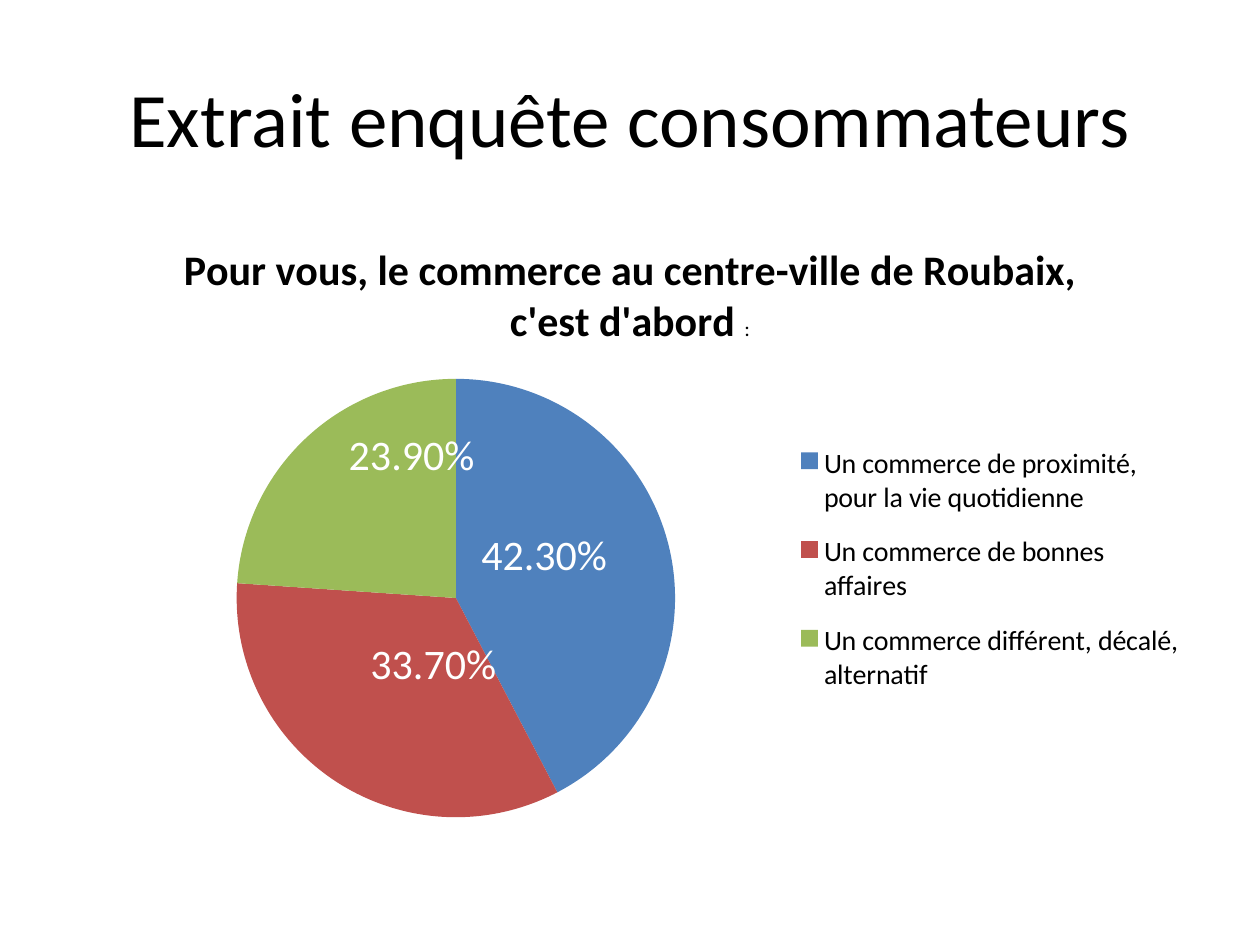
from lxml.etree import SubElement
from pptx import Presentation
from pptx.chart.data import CategoryChartData
from pptx.dml.color import RGBColor
from pptx.enum.chart import XL_CHART_TYPE, XL_LABEL_POSITION, XL_LEGEND_POSITION
from pptx.enum.text import MSO_ANCHOR, PP_ALIGN
from pptx.oxml.ns import qn
from pptx.util import Inches, Pt

BLACK = RGBColor(0x00, 0x00, 0x00)
WHITE = RGBColor(0xFF, 0xFF, 0xFF)
BLUE = RGBColor(0x4F, 0x81, 0xBD)
RED = RGBColor(0xC0, 0x50, 0x4D)
GREEN = RGBColor(0x9B, 0xBB, 0x59)

QUESTION = "Pour vous, le commerce au centre-ville de Roubaix, c'est d'abord "
ANSWERS = [
    ("Un commerce de proximité, pour la vie quotidienne", 0.423, BLUE, (-0.016, -0.024)),
    ("Un commerce de bonnes affaires", 0.337, RED, (0.033, -0.038)),
    ("Un commerce différent, décalé, alternatif", 0.239, GREEN, (0.027, -0.098)),
]


def format_font(font, size, color=BLACK, bold=False):
    """Apply the deck's typeface with a size, colour and weight."""
    font.name = "Calibri"
    font.size = Pt(size)
    font.color.rgb = color
    font.bold = bold


def add_text(paragraph, text, **font_format):
    """Append a formatted run to a centred paragraph."""
    paragraph.alignment = PP_ALIGN.CENTER
    run = paragraph.add_run()
    run.text = text
    format_font(run.font, **font_format)


def set_layout(parent, index, **settings):
    """Give a chart part a manual layout at its place in the schema order."""
    for previous in parent.findall(qn("c:layout")):
        parent.remove(previous)
    layout = SubElement(parent, qn("c:layout"))
    parent.insert(index, layout)
    manual = SubElement(layout, qn("c:manualLayout"))
    for tag, value in settings.items():
        SubElement(manual, qn(f"c:{tag}")).set("val", str(value))


def add_heading(slide, text):
    """Fill and place the slide title."""
    heading = slide.shapes.title
    heading.left, heading.top = Inches(0.5), Inches(0.3)
    heading.width, heading.height = Inches(9), Inches(1.25)
    heading.text_frame.vertical_anchor = MSO_ANCHOR.MIDDLE
    add_text(heading.text_frame.paragraphs[0], text, size=44)


def color_slices(series):
    """Colour each slice and format its value label."""
    for index, (_, _, color, _) in enumerate(ANSWERS):
        point = series.points[index]
        point.format.fill.solid()
        point.format.fill.fore_color.rgb = color
        format_font(point.data_label.font, 24, WHITE)
        point.data_label.position = XL_LABEL_POSITION.CENTER
    labels = series.data_labels
    labels.show_value = True
    labels.show_percentage = False
    labels.number_format = "0.00%"
    labels.number_format_is_linked = False
    format_font(labels.font, 24, WHITE)


def add_survey_pie(slide):
    """Add the pie chart of the survey answers."""
    survey = CategoryChartData(number_format="0.00%")
    survey.categories = [answer for answer, *_ in ANSWERS]
    survey.add_series(f"{QUESTION}:", [share for _, share, *_ in ANSWERS])
    chart = slide.shapes.add_chart(
        XL_CHART_TYPE.PIE, Inches(0.5), Inches(1.75), Inches(9), Inches(4.95), survey
    ).chart
    format_font(chart.font, 10)

    chart.has_title = True
    question = chart.chart_title.text_frame.paragraphs[0]
    add_text(question, QUESTION, size=24, bold=True)
    add_text(question, ":", size=12)

    chart.has_legend = True
    chart.legend.position = XL_LEGEND_POSITION.RIGHT
    chart.legend.include_in_layout = False
    format_font(chart.legend.font, 16)

    chart.plots[0].vary_by_categories = True
    color_slices(chart.plots[0].series[0])

    plot_area = chart.element.find(".//" + qn("c:plotArea"))
    set_layout(plot_area, 0, layoutTarget="inner", xMode="edge", yMode="edge",
               x=0.025, y=0.254, w=0.643, h=0.703)
    legend = chart.element.find(".//" + qn("c:legend"))
    set_layout(legend, 1, xMode="edge", yMode="edge", x=0.655, y=0.33, w=0.335, h=0.46)
    for label, (*_, (dx, dy)) in zip(chart.element.iter(qn("c:dLbl")), ANSWERS):
        set_layout(label, 1, x=dx, y=dy)


def main():
    """Build the survey slide and save it."""
    deck = Presentation()
    deck.slide_width, deck.slide_height = Inches(10), Inches(7.5)
    slide = deck.slides.add_slide(deck.slide_layouts[5])
    add_heading(slide, "Extrait enquête consommateurs")
    add_survey_pie(slide)
    deck.save("out.pptx")


if __name__ == "__main__":
    main()
